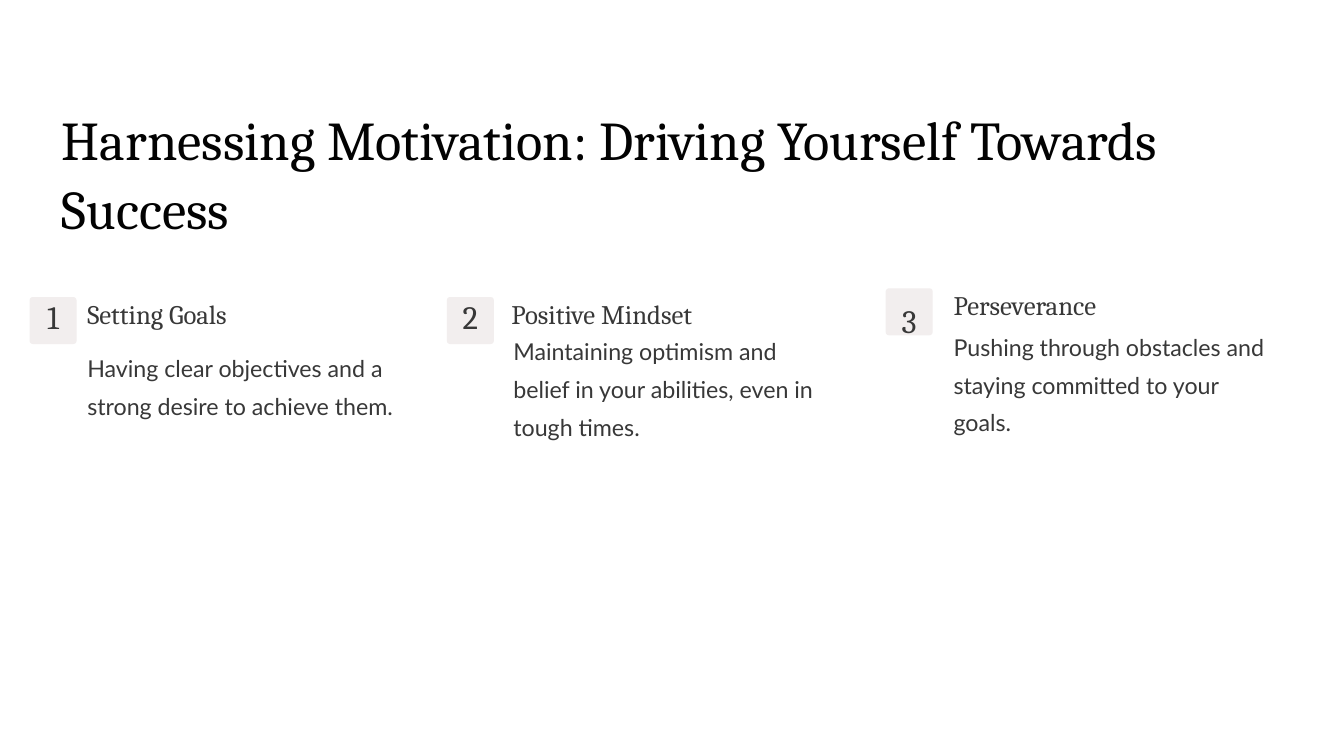
from dataclasses import dataclass

import pptx
import pptx.dml.color
import pptx.enum.shapes
import pptx.enum.text
import pptx.util

EMU_PER_PX = 9144
SLIDE_WIDTH, SLIDE_HEIGHT = 2000, 1125
BADGE_SIZE = 70
NUMBER_INSET = 22
COLORS = {"background": "FFFFFF", "title": "020202", "text": "383838", "badge": "F2EEEE"}


@dataclass(frozen=True)
class TextStyle:
    font: str
    size: float
    line_spacing: float
    color: str
    alignment: pptx.enum.text.PP_ALIGN = pptx.enum.text.PP_ALIGN.LEFT


@dataclass(frozen=True)
class Step:
    heading: str
    description: str
    badge_left: int
    badge_top: int
    number_top: int
    heading_left: int
    description_left: int
    description_top: int


TITLE = TextStyle("Cambria", 58.5, 73.6, "title")
NUMBER = TextStyle("Cambria", 35, 35, "text", pptx.enum.text.PP_ALIGN.CENTER)
HEADING = TextStyle("Cambria", 28.7, 36.2, "text")
DESCRIPTION = TextStyle("Lato", 24.9, 40.5, "text")

STEPS = [
    Step("Setting Goals", "Having clear objectives and a strong desire to achieve them.",
         44, 442, 451, 130, 130, 512),
    Step("Positive Mindset",
         "Maintaining optimism and belief in your abilities, even in tough times.",
         665, 442, 451, 761, 764, 487),
    Step("Perseverance", "Pushing through obstacles and staying committed to your goals.",
         1318, 429, 457, 1419, 1419, 481),
]


def px(length: int) -> pptx.util.Emu:
    return pptx.util.Emu(length * EMU_PER_PX)


def rgb(name: str) -> pptx.dml.color.RGBColor:
    return pptx.dml.color.RGBColor.from_string(COLORS[name])


def add_text(slide, text: str, left: int, top: int, width: int, height: int,
             style: TextStyle) -> None:
    text_box = slide.shapes.add_textbox(px(left), px(top), px(width), px(height))
    text_frame = text_box.text_frame
    text_frame.margin_left = text_frame.margin_right = 0
    text_frame.margin_top = text_frame.margin_bottom = 0
    text_frame.word_wrap = True
    text_frame.auto_size = pptx.enum.text.MSO_AUTO_SIZE.SHAPE_TO_FIT_TEXT
    text_frame.text = text
    paragraph = text_frame.paragraphs[0]
    paragraph.alignment = style.alignment
    paragraph.line_spacing = pptx.util.Pt(style.line_spacing)
    font = paragraph.runs[0].font
    font.name = style.font
    font.size = pptx.util.Pt(style.size)
    font.color.rgb = rgb(style.color)


def add_badge(slide, left: int, top: int) -> None:
    badge = slide.shapes.add_shape(
        pptx.enum.shapes.MSO_SHAPE.ROUNDED_RECTANGLE,
        px(left), px(top), px(BADGE_SIZE), px(BADGE_SIZE))
    badge.adjustments[0] = 0.07
    badge.shadow.inherit = False
    badge.fill.solid()
    badge.fill.fore_color.rgb = rgb("badge")
    badge.line.fill.background()


def add_step(slide, number: int, step: Step) -> None:
    add_badge(slide, step.badge_left, step.badge_top)
    add_text(slide, str(number), step.badge_left + NUMBER_INSET, step.number_top,
             BADGE_SIZE - 2 * NUMBER_INSET, 42, NUMBER)
    add_text(slide, step.heading, step.heading_left, step.badge_top - 2, 407, 53, HEADING)
    add_text(slide, step.description, step.description_left, step.description_top,
             473, 165, DESCRIPTION)


def main() -> None:
    presentation = pptx.Presentation()
    presentation.slide_width = px(SLIDE_WIDTH)
    presentation.slide_height = px(SLIDE_HEIGHT)
    slide = presentation.slides.add_slide(presentation.slide_layouts[6])
    slide.background.fill.solid()
    slide.background.fill.fore_color.rgb = rgb("background")

    add_text(slide, "Harnessing Motivation: Driving Yourself Towards Success",
             92, 153, 1795, 203, TITLE)
    for number, step in enumerate(STEPS, start=1):
        add_step(slide, number, step)

    presentation.save("out.pptx")


if __name__ == "__main__":
    main()
